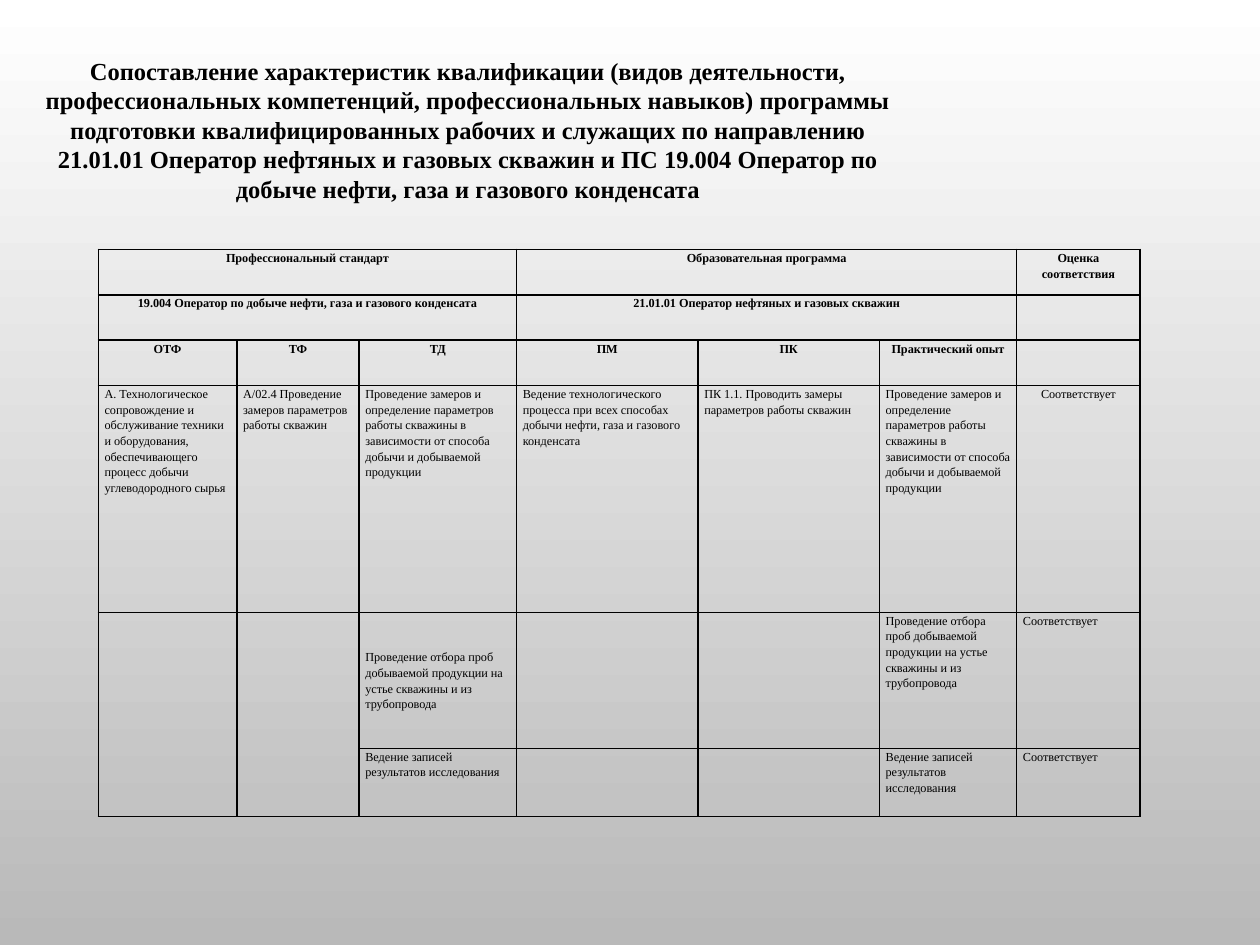
from dataclasses import dataclass

from lxml.etree import SubElement
from pptx import Presentation
from pptx.dml.color import RGBColor
from pptx.enum.text import MSO_ANCHOR, PP_ALIGN
from pptx.oxml.ns import qn
from pptx.util import Inches, Pt


@dataclass(frozen=True)
class Theme:
    font: str = "Times New Roman"
    ink: str = "000000"
    top: str = "FFFFFF"
    bottom: str = "B9B9B9"
    title_size: int = 14
    cell_size: int = 7
    border: int = 1
    line_spacing: float = 1.15
    cell_inset: float = 0.05


THEME = Theme()
COLUMNS = [1.1, 0.97, 1.25, 1.44, 1.44, 1.09, 0.98]
ROWS = [0.36, 0.36, 0.36, 1.8, 1.08, 0.54]
HEADER_ROWS = 3
MERGES = [((row, left), (row, left + 2)) for row in (0, 1) for left in (0, 3)]
MERGES += [((4, column), (5, column)) for column in (0, 1)]

TITLE = (
    "Сопоставление характеристик квалификации (видов деятельности, "
    "профессиональных компетенций, профессиональных навыков) программы "
    "подготовки квалифицированных рабочих и служащих по направлению "
    "21.01.01 Оператор нефтяных и газовых скважин и ПС 19.004 Оператор по "
    "добыче нефти, газа и газового конденсата"
)
MEASURING = (
    "Проведение замеров и определение параметров работы скважины "
    "в зависимости от способа добычи и добываемой продукции"
)
SAMPLING = (
    "Проведение отбора проб добываемой продукции на устье скважины "
    "и из трубопровода"
)
RECORDS = "Ведение записей результатов исследования"
MATCH = "Соответствует"
CONTENT = [
    ["Профессиональный стандарт", "", "",
     "Образовательная программа", "", "", "Оценка соответствия"],
    ["19.004 Оператор по добыче нефти, газа и газового конденсата", "", "",
     "21.01.01 Оператор нефтяных и газовых скважин", "", "", ""],
    ["ОТФ", "ТФ", "ТД", "ПМ", "ПК", "Практический опыт", ""],
    ["А. Технологическое сопровождение и обслуживание техники и оборудования, "
     "обеспечивающего процесс добычи углеводородного сырья",
     "А/02.4 Проведение замеров параметров работы скважин",
     MEASURING,
     "Ведение технологического процесса при всех способах добычи нефти, "
     "газа и газового конденсата",
     "ПК 1.1. Проводить замеры параметров работы скважин",
     MEASURING, MATCH],
    ["", "", SAMPLING, "", "", SAMPLING, MATCH],
    ["", "", RECORDS, "", "", RECORDS, MATCH],
]


def paint_background(page):
    fill = page.background.fill
    fill.gradient()
    fill.gradient_angle = 270
    for stop, color in zip(fill.gradient_stops, (THEME.top, THEME.bottom)):
        stop.color.rgb = RGBColor.from_string(color)


def style_paragraph(para, size, bold, centered):
    para.alignment = PP_ALIGN.CENTER if centered else PP_ALIGN.LEFT
    para.font.name = THEME.font
    para.font.size = Pt(size)
    para.font.bold = bold
    para.font.color.rgb = RGBColor.from_string(THEME.ink)


def add_title(page, deck):
    width, height = deck.slide_width, deck.slide_height
    box = page.shapes.add_textbox(
        int(width * 0.016), int(height * 0.052),
        int(width * 0.711), int(height * 0.17))
    frame = box.text_frame
    frame.word_wrap = True
    frame.vertical_anchor = MSO_ANCHOR.MIDDLE
    frame.text = TITLE
    style_paragraph(frame.paragraphs[0], THEME.title_size, True, True)


def draw_borders(cell):
    properties = cell._tc.get_or_add_tcPr()
    for position, side in enumerate(("a:lnL", "a:lnR", "a:lnT", "a:lnB")):
        line = SubElement(properties, qn(side), w=str(Pt(THEME.border)))
        fill = SubElement(line, qn("a:solidFill"))
        SubElement(fill, qn("a:srgbClr"), val=THEME.ink)
        properties.insert(position, line)


def fill_cell(cell, text, bold, centered):
    cell.margin_left = cell.margin_right = Inches(THEME.cell_inset)
    cell.margin_top = cell.margin_bottom = 0
    cell.fill.background()
    draw_borders(cell)
    cell.text = text
    para = cell.text_frame.paragraphs[0]
    para.line_spacing = THEME.line_spacing
    style_paragraph(para, THEME.cell_size, bold, centered)


def add_comparison_table(page, deck):
    table = page.shapes.add_table(
        len(ROWS), len(COLUMNS),
        int(deck.slide_width * 0.078), int(deck.slide_height * 0.264),
        Inches(sum(COLUMNS)), Inches(sum(ROWS))).table
    table.first_row = table.horz_banding = False
    for column, width in zip(table.columns, COLUMNS):
        column.width = Inches(width)
    for row, height in zip(table.rows, ROWS):
        row.height = Inches(height)
    for row, texts in enumerate(CONTENT):
        header = row < HEADER_ROWS
        for column, text in enumerate(texts):
            centered = header or (row, column) == (3, 6)
            fill_cell(table.cell(row, column), text, header, centered)
    for first, last in MERGES:
        table.cell(*first).merge(table.cell(*last))
    table.cell(4, 2).vertical_anchor = MSO_ANCHOR.MIDDLE


def main():
    deck = Presentation()
    deck.slide_width, deck.slide_height = Inches(10), Inches(7.5)
    page = deck.slides.add_slide(deck.slide_layouts[6])
    paint_background(page)
    add_title(page, deck)
    add_comparison_table(page, deck)
    deck.save("out.pptx")


if __name__ == "__main__":
    main()
